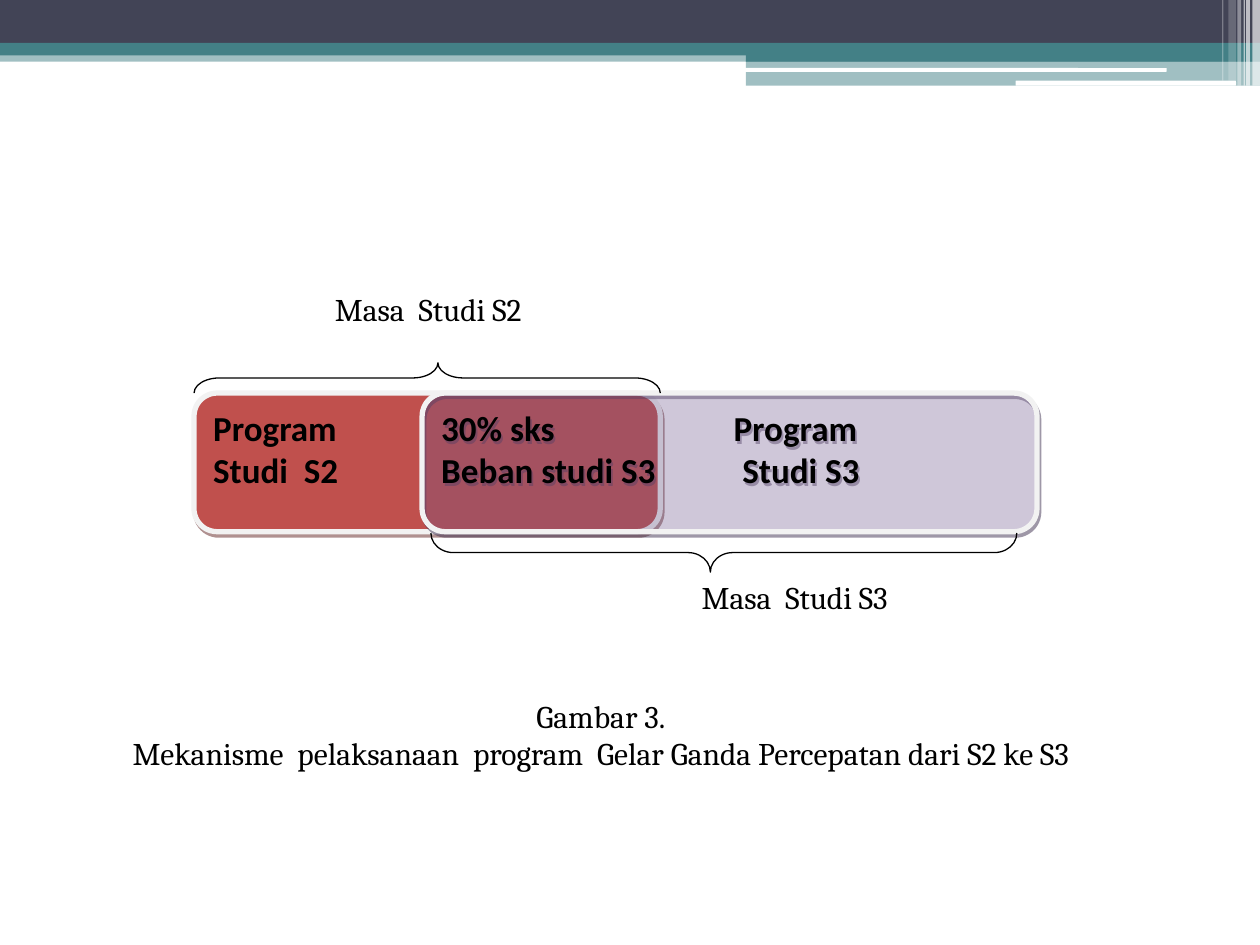
from lxml import etree
from pptx import Presentation
from pptx.dml.color import RGBColor
from pptx.enum.shapes import MSO_SHAPE
from pptx.enum.text import MSO_ANCHOR, MSO_AUTO_SIZE, PP_ALIGN
from pptx.oxml.ns import qn
from pptx.util import Inches, Pt

RECTANGLE = MSO_SHAPE.RECTANGLE
ROUNDED = MSO_SHAPE.ROUNDED_RECTANGLE
PROCESS = MSO_SHAPE.FLOWCHART_ALTERNATE_PROCESS
BRACE = MSO_SHAPE.LEFT_BRACE
LEFT, CENTER = PP_ALIGN.LEFT, PP_ALIGN.CENTER

COLORS = {
    "navy": "424456",
    "teal": "438086",
    "white": "FFFFFF",
    "black": "000000",
    "border": "F2F2F2",
    "master": "C0504D",
    "master_shadow": "622423",
    "doctoral": "8064A2",
    "doctoral_shadow": "3F3151",
}


def add_alpha(color_element, percent):
    etree.SubElement(color_element, qn("a:alpha"), val=str(percent * 1000))


def add_block(slide, kind, box, fill=None, opacity=100, line=None, line_width=1):
    shape = slide.shapes.add_shape(kind, *map(Inches, box))
    shape.shadow.inherit = False
    if fill:
        shape.fill.solid()
        shape.fill.fore_color.rgb = RGBColor.from_string(COLORS[fill])
        if opacity < 100:
            add_alpha(shape._element.spPr.find(qn("a:solidFill"))[0], opacity)
    else:
        shape.fill.background()
    if line:
        shape.line.color.rgb = RGBColor.from_string(COLORS[line])
        shape.line.width = Pt(line_width)
    else:
        shape.line.fill.background()
    return shape


def add_outer_shadow(shape, color, opacity=50, distance=2.2, angle=63):
    effects = shape._element.spPr.find(qn("a:effectLst"))
    shadow = etree.SubElement(
        effects, qn("a:outerShdw"), blurRad="0", dist=str(Pt(distance)),
        dir=str(angle * 60000), algn="ctr", rotWithShape="0")
    add_alpha(etree.SubElement(shadow, qn("a:srgbClr"), val=COLORS[color]), opacity)


def write_text(shape, lines, font="Cambria", size=18, bold=False, align=LEFT,
               wrap=False, tabs=()):
    """Write one paragraph per line; tabs holds one tab stop per paragraph."""
    frame = shape.text_frame
    frame.word_wrap = wrap
    frame.vertical_anchor = MSO_ANCHOR.TOP
    for index, line in enumerate(lines):
        paragraph = frame.paragraphs[0] if index == 0 else frame.add_paragraph()
        paragraph.alignment = align
        run = paragraph.add_run()
        run.text = line
        run.font.name = font
        run.font.size = Pt(size)
        run.font.bold = bold
        run.font.color.rgb = RGBColor.from_string(COLORS["black"])
        if tabs:
            stops = etree.SubElement(paragraph._p.get_or_add_pPr(), qn("a:tabLst"))
            etree.SubElement(stops, qn("a:tab"), pos=str(Inches(tabs[index])), algn="l")


def add_label(slide, box, lines, **text_format):
    label = slide.shapes.add_textbox(*map(Inches, box))
    write_text(label, lines, **text_format)
    label.text_frame.auto_size = MSO_AUTO_SIZE.SHAPE_TO_FIT_TEXT


def add_header(slide, box):
    left, top, width, _ = box
    right = left + width
    panel = width - 5.92
    bands = [
        (RECTANGLE, 0, 0.4, width, 0.09, "teal", 50),
        (RECTANGLE, 0, 0, width, 0.34, "navy", 100),
        (RECTANGLE, 0, 0.34, width, 0.1, "teal", 100),
        (RECTANGLE, 5.92, 0.39, panel, 0.1, "teal", 100),
        (RECTANGLE, 5.92, 0.48, panel, 0.2, "teal", 50),
        (ROUNDED, 5.91, 0.54, 3.35, 0.03, "white", 100),
        (ROUNDED, 8.06, 0.64, 1.75, 0.04, "white", 100),
    ]
    for kind, x, y, band_width, height, fill, opacity in bands:
        add_block(slide, kind, (left + x, top + y, band_width, height), fill, opacity)

    # Distance from the right edge, width, height, opacity
    stripes = [
        (0.06, 0.06, 0.68, 65),
        (0.11, 0.03, 0.68, 65),
        (0.13, 0.01, 0.68, 60),
        (0.18, 0.03, 0.68, 40),
        (0.25, 0.06, 0.64, 20),
        (0.3, 0.01, 0.64, 30),
    ]
    for offset, stripe_width, height, opacity in stripes:
        add_block(slide, RECTANGLE, (right - offset, top, stripe_width, height),
                  "white", opacity)


def add_brace(slide, box, rotation, curve):
    """Turn a left brace so that it fills the horizontal box."""
    left, top, width, height = box
    upright = (left + (width - height) / 2, top + (height - width) / 2, height, width)
    brace = add_block(slide, BRACE, upright, line="black", line_width=0.75)
    brace.rotation = rotation
    brace.adjustments[0] = curve
    brace.adjustments[1] = 0.477


def add_program_diagram(slide, box):
    left, top, width, height = box
    overlap_left = left + 1.81
    master_width = 3.7
    programs = [
        (PROCESS, left, master_width, "master", 100,
         ["Program", "Studi  S2"], ()),
        (ROUNDED, overlap_left, left + width - overlap_left, "doctoral", 23,
         ["30% sks\tProgram", "Beban studi S3\tStudi S3"], (2.32, 2.39)),
    ]
    for kind, x, program_width, fill, opacity, lines, tabs in programs:
        program = add_block(slide, kind, (x, top, program_width, height),
                            fill, opacity, "border", 3)
        add_outer_shadow(program, fill + "_shadow")
        write_text(program, lines, font="Calibri", size=20, bold=True,
                   wrap=True, tabs=tabs)

    add_brace(slide, (left, top - 0.24, master_width, 0.24), 90, 0.836)
    add_brace(slide, (overlap_left + 0.07, top + height + 0.01, 4.65, 0.31), 270, 0.573)
    add_label(slide, (left + 1.02, top - 0.87, 1.86, 0.4), ["Masa  Studi S2"])
    add_label(slide, (left + 3.93, top + height + 0.32, 1.86, 0.4), ["Masa  Studi S3"])


def add_caption(slide, box):
    add_label(slide, box, [
        "Gambar 3.",
        "Mekanisme  pelaksanaan  program  Gelar Ganda Percepatan dari S2 ke S3",
    ], align=CENTER)


def main():
    presentation = Presentation()
    presentation.slide_width = Inches(10)
    presentation.slide_height = Inches(7.5)
    slide = presentation.slides.add_slide(presentation.slide_layouts[6])
    add_header(slide, (0, 0, 10, 0.68))
    add_program_diagram(slide, (1.54, 3.12, 6.69, 1.1))
    add_caption(slide, (0.54, 5.48, 8.46, 0.71))
    presentation.save("out.pptx")


if __name__ == "__main__":
    main()
